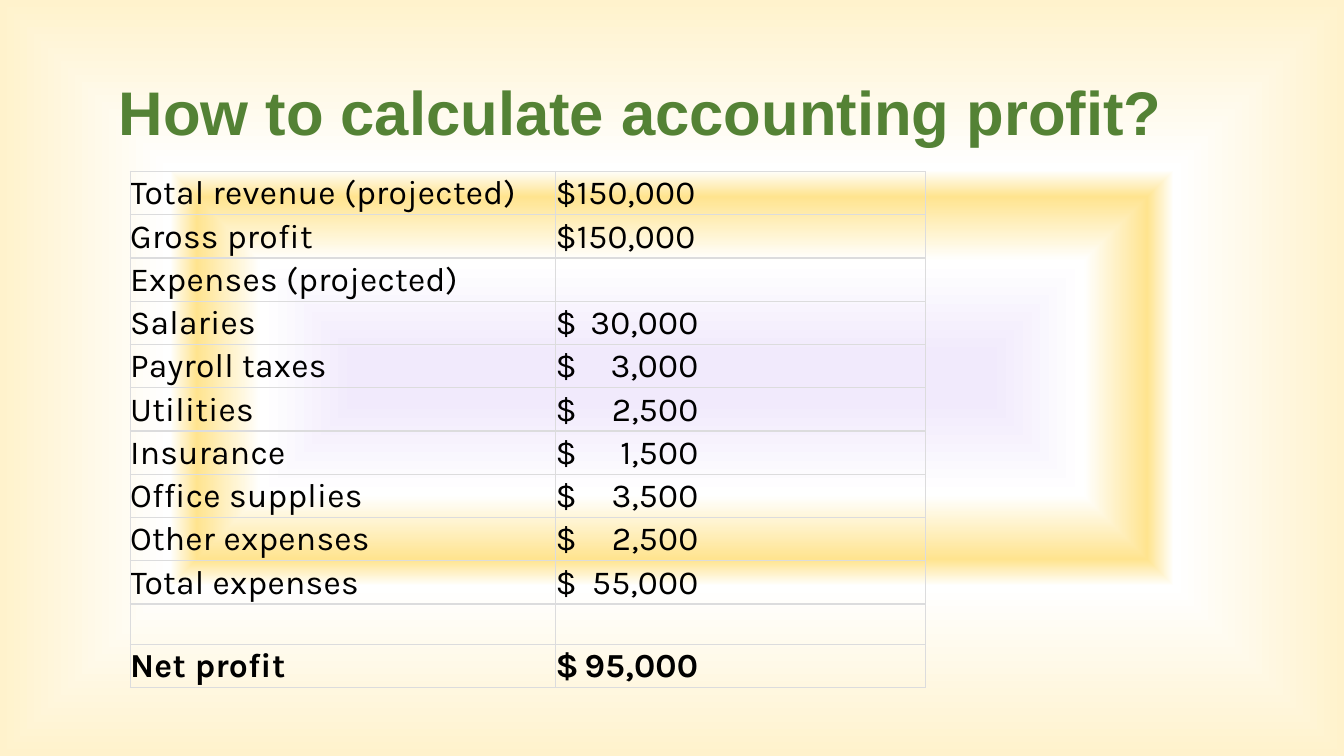
import pptx
import pptx.dml.color
import pptx.enum.text
import pptx.oxml
import pptx.oxml.ns
import pptx.util
from lxml import etree

Cm = pptx.util.Cm
Pt = pptx.util.Pt
qn = pptx.oxml.ns.qn

NO_TABLE_STYLE = "{2D5ABB26-0587-4C30-8999-92F81FD0307C}"
GLOW = [(6, "F1EAFC"), (31, "FFFFFF"), (48, "FFE48F"), (55, "FFFFFF"), (100, "FFF2CC")]
PROFIT_LINES = [
    ("Total revenue (projected)", "$150,000"),
    ("Gross profit", "$150,000"),
    ("Expenses (projected)", ""),
    ("Salaries", "$\t30,000"),
    ("Payroll taxes", "$\t3,000"),
    ("Utilities", "$\t2,500"),
    ("Insurance", "$\t1,500"),
    ("Office supplies", "$\t3,500"),
    ("Other expenses", "$\t2,500"),
    ("Total expenses", "$\t55,000"),
    ("", ""),
    ("Net profit", "$\t95,000"),
]


def color(hex_string):
    return pptx.dml.color.RGBColor.from_string(hex_string)


class ProfitSlide:
    heading_font, heading_color = "Arial", "548235"
    body_font, body_color = "Karla", "000000"
    border_color = "DCDCDD"
    amount_tab = Cm(3.6)

    def __init__(self, presentation):
        self.slide = presentation.slides.add_slide(presentation.slide_layouts[6])

    def background(self, stops):
        """Fill the slide with a gradient that grows from its centre."""
        self.slide.background.fill.solid()
        properties = self.slide.background._cSld.bg.bgPr
        properties.remove(properties.find(qn("a:solidFill")))
        marks = "".join(
            f'<a:gs pos="{percent * 1000}"><a:srgbClr val="{shade}"/></a:gs>'
            for percent, shade in stops)
        properties.insert(0, pptx.oxml.parse_xml(
            f'<a:gradFill {pptx.oxml.ns.nsdecls("a")} rotWithShape="1"><a:gsLst>{marks}</a:gsLst>'
            '<a:path path="shape"><a:fillToRect l="50000" t="50000" r="50000" b="50000"/>'
            '</a:path></a:gradFill>'))

    def set_font(self, paragraph, name, size, shade, bold):
        font = paragraph.font
        font.name, font.size, font.bold = name, Pt(size), bold
        font.color.rgb = color(shade)

    def heading(self, text, left, top, width, height):
        frame = self.slide.shapes.add_textbox(left, top, width, height).text_frame
        frame.word_wrap = True
        frame.vertical_anchor = pptx.enum.text.MSO_ANCHOR.MIDDLE
        frame.text = text
        self.set_font(frame.paragraphs[0], self.heading_font, 44, self.heading_color, True)

    def borders(self, cell):
        properties = cell._tc.get_or_add_tcPr()
        for position, side in enumerate(("lnL", "lnR", "lnT", "lnB")):
            line = etree.Element(qn(f"a:{side}"), w=str(Pt(1)))
            fill = etree.SubElement(line, qn("a:solidFill"))
            etree.SubElement(fill, qn("a:srgbClr"), val=self.border_color)
            properties.insert(position, line)

    def cell_text(self, cell, text, bold):
        cell.margin_left = cell.margin_right = cell.margin_top = cell.margin_bottom = 0
        cell.text = text
        paragraph = cell.text_frame.paragraphs[0]
        paragraph.line_spacing = 1.07
        paragraph.space_after = Pt(8)
        if "\t" in text:
            tabs = etree.SubElement(paragraph._p.get_or_add_pPr(), qn("a:tabLst"))
            etree.SubElement(tabs, qn("a:tab"), pos=str(self.amount_tab), algn="r")
        self.set_font(paragraph, self.body_font, 24, self.body_color, bold)
        for run in paragraph.runs:
            run._r.get_or_add_rPr().set("spc", "20")

    def table(self, lines, left, top, widths, row_height, gap_height):
        heights = [row_height if any(line) else gap_height for line in lines]
        table = self.slide.shapes.add_table(
            len(lines), len(widths), left, top, sum(widths), sum(heights)).table
        table.first_row = table.horz_banding = False
        table._tbl.tblPr.find(qn("a:tableStyleId")).text = NO_TABLE_STYLE
        for column, width in zip(table.columns, widths):
            column.width = width
        for row, height, line in zip(table.rows, heights, lines):
            row.height = height
            for cell, text in zip(row.cells, line):
                cell.fill.background()
                self.borders(cell)
                if text:
                    self.cell_text(cell, text, bold=line is lines[-1])


def main():
    presentation = pptx.Presentation()
    presentation.slide_width, presentation.slide_height = Cm(33.87), Cm(19.05)
    slide = ProfitSlide(presentation)
    slide.background(GLOW)
    slide.heading("How to calculate accounting profit?", Cm(2.74), Cm(1.73), Cm(29.11), Cm(2.13))
    slide.table(PROFIT_LINES, Cm(3.28), Cm(4.32), [Cm(10.72), Cm(9.32)], Cm(1.09), Cm(1.02))
    presentation.save("out.pptx")


if __name__ == "__main__":
    main()
